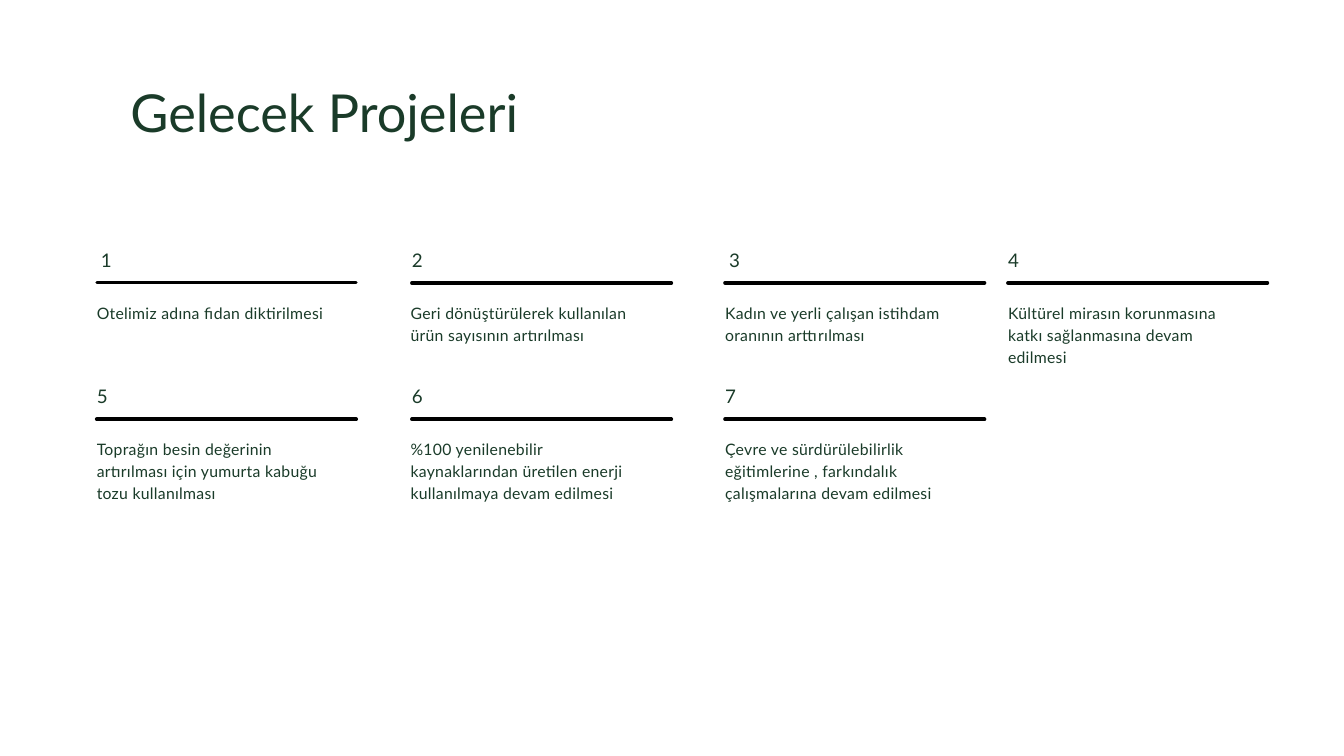
from pptx import Presentation
from pptx.dml.color import RGBColor
from pptx.enum.shapes import MSO_CONNECTOR as Conn
from pptx.enum.text import MSO_ANCHOR as Anchor, MSO_AUTO_SIZE as Auto, PP_ALIGN as Align
from pptx.oxml.ns import qn
from pptx.util import Pt
from lxml.etree import SubElement as sub

PX = 9144
FONT = "Lato"
COLORS = {"text": "1A3B29", "rule": "000000"}
COLS = [(144, 144), (613, 611), (1079, 1079), (1500, 1500)]
TOP, STEP = 364, 203
WIDTH, RULE = 345, 386
CARDS = [
    "Otelimiz adına fidan diktirilmesi",
    "Geri dönüştürülerek kullanılan ürün sayısının artırılması",
    "Kadın ve yerli çalışan istihdam oranının arttırılması",
    "Kültürel mirasın korunmasına katkı sağlanmasına devam edilmesi",
    "Toprağın besin değerinin artırılması için yumurta kabuğu tozu kullanılması",
    "%100 yenilenebilir kaynaklarından üretilen enerji kullanılmaya devam edilmesi",
    "Çevre ve sürdürülebilirlik eğitimlerine , farkındalık çalışmalarına devam edilmesi",
]
INSET = {1: 6, 3: 6}
THIN = {1: 3}


def px(*vals):
    return [val * PX for val in vals]


def write(shape, text, size, lead, track=0, inset=0):
    frame = shape.text_frame
    frame.word_wrap = True
    frame.auto_size = Auto.SHAPE_TO_FIT_TEXT
    frame.vertical_anchor = Anchor.TOP
    frame.margin_left = inset * PX
    frame.margin_top = frame.margin_right = frame.margin_bottom = 0
    para = frame.paragraphs[0]
    para.alignment = Align.LEFT
    para.line_spacing = Pt(lead)
    para.space_before = Pt(0)
    run = para.add_run()
    run.text = text
    run.font.name = FONT
    run.font.size = Pt(size)
    run.font.color.rgb = RGBColor.from_string(COLORS["text"])
    if track:
        run._r.get_or_add_rPr().set("spc", str(track))


def add_title(slide, text):
    title = slide.shapes.title
    title.left, title.top, title.width, title.height = px(194, 120, 873, 94)
    write(title, text, 56, 67.2)


def add_rule(shapes, x, y, weight):
    rule = shapes.add_connector(Conn.STRAIGHT, *px(x, y, x + RULE, y))
    rule.line.color.rgb = RGBColor.from_string(COLORS["rule"])
    rule.line.width = Pt(weight)
    rule.line._get_or_add_ln().set("cap", "rnd")
    sub(rule._element.spPr, qn("a:effectLst"))


def add_card(slide, num, text):
    row, col = divmod(num - 1, len(COLS))
    x, left = COLS[col]
    y = TOP + row * STEP
    shapes = slide.shapes.add_group_shape().shapes
    body = shapes.add_textbox(*px(left, y + 83, WIDTH, 96))
    write(body, text, 16.9, 23.6, track=30)
    label = shapes.add_textbox(*px(x, y, WIDTH, 36))
    write(label, str(num), 20.1, 28.1, track=20, inset=INSET.get(num, 0))
    add_rule(shapes, x, y + 57, THIN.get(num, 4))


def main():
    deck = Presentation()
    deck.slide_width, deck.slide_height = px(2000, 1125)
    slide = deck.slides.add_slide(deck.slide_layouts[5])
    add_title(slide, "Gelecek Projeleri")
    for num, text in enumerate(CARDS, 1):
        add_card(slide, num, text)
    deck.save("out.pptx")


if __name__ == "__main__":
    main()
